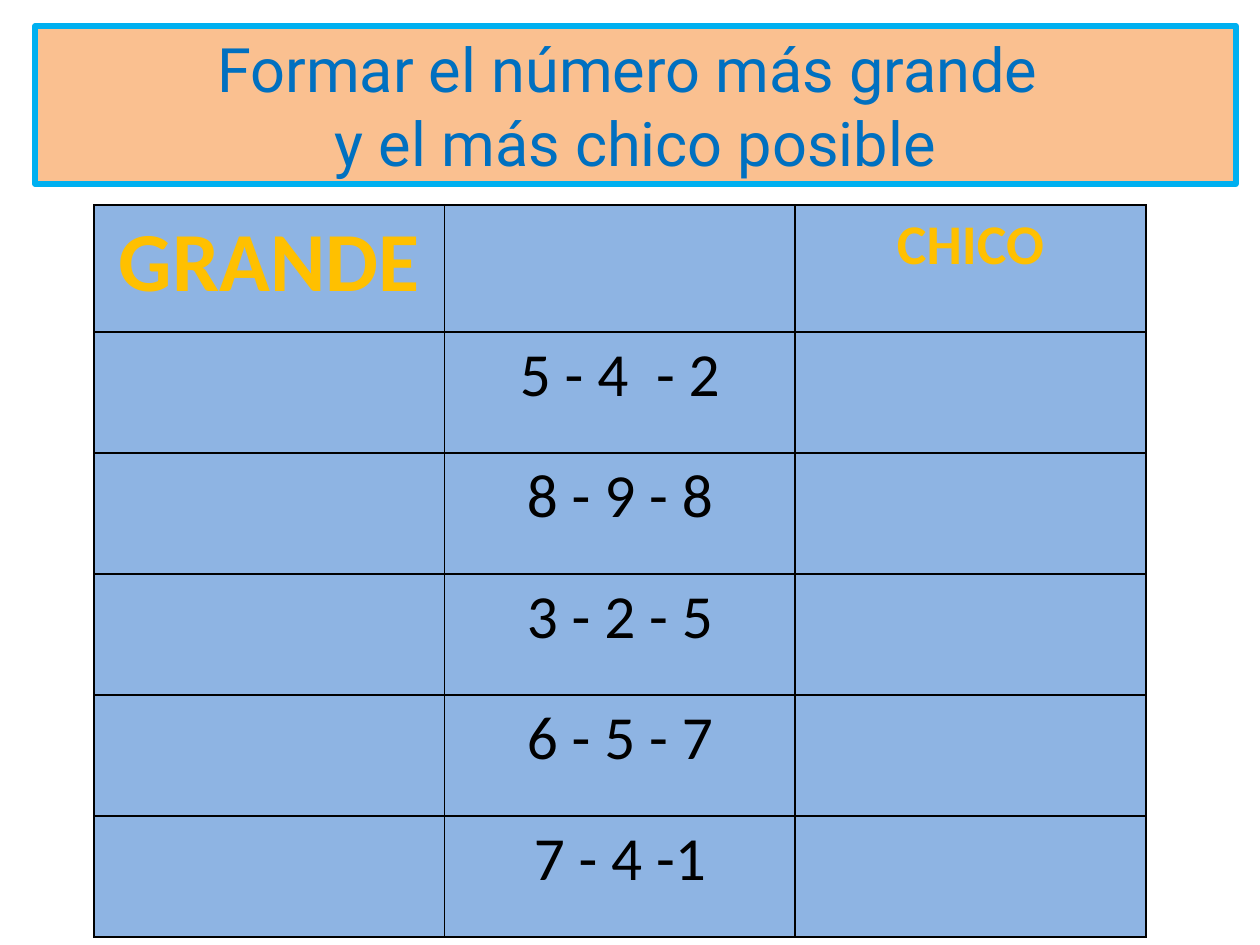
from lxml import etree
from pptx import Presentation
from pptx.dml.color import RGBColor
from pptx.enum.shapes import MSO_SHAPE
from pptx.enum.text import MSO_ANCHOR, PP_ALIGN
from pptx.oxml.ns import qn
from pptx.util import Pt

PX = 914400 // 126
RECTANGLE = MSO_SHAPE.RECTANGLE
CENTER = PP_ALIGN.CENTER
MIDDLE = MSO_ANCHOR.MIDDLE

PEACH = RGBColor(0xFA, 0xC0, 0x90)
CYAN = RGBColor(0x00, 0xB0, 0xF0)
BLUE = RGBColor(0x00, 0x70, 0xC0)
CELL_BLUE = RGBColor(0x8E, 0xB4, 0xE3)
GOLD = RGBColor(0xFF, 0xC0, 0x00)
BLACK = RGBColor(0x00, 0x00, 0x00)


def write(frame, text, *, size, color, font="Calibri", bold=False):
    para = frame.paragraphs[0]
    para.text = text
    para.alignment = CENTER
    for span in para.runs:
        span.font.name = font
        span.font.size = Pt(size)
        span.font.bold = bold
        span.font.color.rgb = color


def add_borders(cell, color, width):
    """Draw all four edges; must run before the cell gets its fill."""
    properties = cell._tc.get_or_add_tcPr()
    for edge in ("a:lnL", "a:lnR", "a:lnT", "a:lnB"):
        line = etree.SubElement(properties, qn(edge), w=str(Pt(width)))
        fill = etree.SubElement(line, qn("a:solidFill"))
        etree.SubElement(fill, qn("a:srgbClr"), val=str(color))


deck = Presentation()
deck.slide_width = 1260 * PX
deck.slide_height = 945 * PX
page = deck.slides.add_slide(deck.slide_layouts[6])

# Title banner
banner = page.shapes.add_shape(RECTANGLE, 35 * PX, 26 * PX, 1201 * PX, 158 * PX)
banner.shadow.inherit = False
banner.fill.solid()
banner.fill.fore_color.rgb = PEACH
banner.line.color.rgb = CYAN
banner.line.width = Pt(3)
banner.text_frame.word_wrap = True
banner.text_frame.vertical_anchor = MIDDLE
write(banner.text_frame, "Formar el número más grande \ny el más chico posible",
      size=35, color=BLUE, font="Roboto")

# Exercise table: digits in the middle, answers on either side
digits = ["5 - 4  - 2", "8 - 9 - 8", "3 - 2 - 5", "6 - 5 - 7", "7 - 4 -1"]
HEADER_HEIGHT, ROW_HEIGHT = 127, 121
table_height = HEADER_HEIGHT + ROW_HEIGHT * len(digits)
table = page.shapes.add_table(len(digits) + 1, 3, 94 * PX, 205 * PX,
                              1052 * PX, table_height * PX).table
for row in table.rows:
    row.height = ROW_HEIGHT * PX
table.rows[0].height = HEADER_HEIGHT * PX

for cell in table.iter_cells():
    add_borders(cell, BLACK, 1)
    cell.fill.solid()
    cell.fill.fore_color.rgb = CELL_BLUE

write(table.cell(0, 0).text_frame, "GRANDE", size=48, color=GOLD, bold=True)
write(table.cell(0, 2).text_frame, "CHICO", size=32, color=GOLD, bold=True)
for number, text in enumerate(digits, start=1):
    write(table.cell(number, 1).text_frame, text, size=35, color=BLACK)

deck.save("out.pptx")
